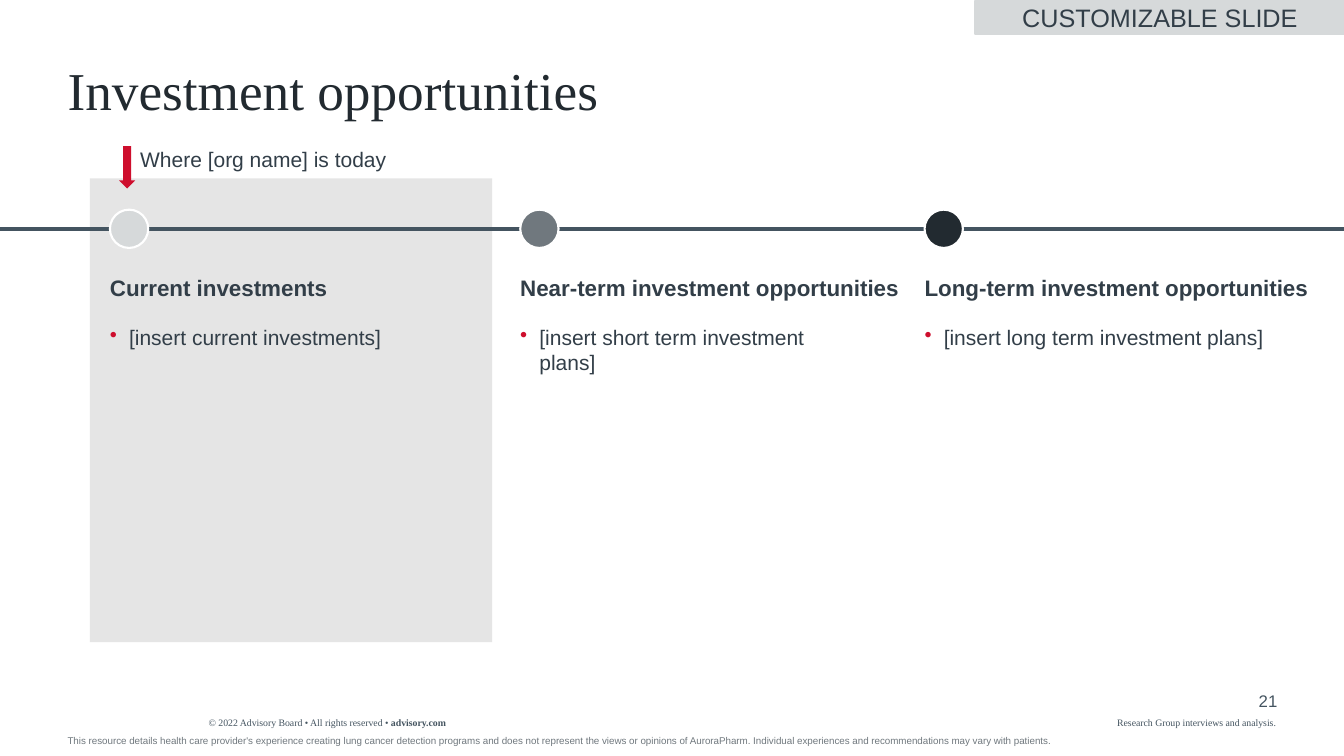
from dataclasses import dataclass

from lxml.etree import SubElement
from pptx import Presentation
from pptx.dml.color import RGBColor
from pptx.enum.shapes import MSO_CONNECTOR, MSO_SHAPE
from pptx.enum.text import MSO_ANCHOR, MSO_AUTO_SIZE, PP_ALIGN
from pptx.oxml.ns import qn
from pptx.util import Inches, Pt

SANS, SERIF = "Arial", "Times New Roman"
INK, SLATE, GREY, DARK = "323E48", "445460", "70787E", "222A30"
SILVER, PANEL, RED, WHITE = "D6D9DA", "E5E5E5", "CE0E2D", "FFFFFF"
SLIDE_WIDTH = 13.33
TIMELINE_Y = 2.27
MARKER_SIZE = 0.38


@dataclass
class Stage:
    left: float
    marker: str
    heading: str
    heading_width: float
    item: str
    item_width: float
    item_height: float = 0.25


@dataclass
class Label:
    text: str
    left: float
    top: float
    width: float
    height: float
    size: float
    color: str
    font: str = SANS
    bold: bool = False
    align: PP_ALIGN = PP_ALIGN.LEFT
    anchor: MSO_ANCHOR = MSO_ANCHOR.TOP
    bullet: bool = False


STAGES = [
    Stage(1.09, SILVER, "Current investments", 2.41,
          "[insert current investments]", 3.4),
    Stage(5.16, GREY, "Near-term investment opportunities", 3.86,
          "[insert short term investment plans]", 3.16, 0.5),
    Stage(9.17, DARK, "Long-term investment opportunities", 3.99,
          "[insert long term investment plans]", 3.42),
]
TITLE = Label("Investment opportunities", 0.67, 0.64, 12, 0.59, 38, DARK, SERIF)
TODAY = Label("Where [org name] is today", 1.39, 1.45, 2.5, 0.25, 15, INK)
COPYRIGHT = Label("© 2022 Advisory Board • All rights reserved • ",
                  2.07, 7.11, 3.26, 0.12, 7, SLATE, SERIF)
FOOTERS = [
    Label("Research Group interviews and analysis.",
          11.08, 7.11, 1.59, 0.12, 7, SLATE, SERIF),
    Label("21", 12.17, 6.85, 0.5, 0.2, 12, SLATE, align=PP_ALIGN.RIGHT),
    Label("This resource details health care provider's experience creating lung cancer "
          "detection programs and does not represent the views or opinions of AuroraPharm. "
          "Individual experiences and recommendations may vary with patients.",
          0.67, 7.17, 11.55, 0.24, 7, GREY, anchor=MSO_ANCHOR.BOTTOM),
]


def rgb(color: str) -> RGBColor:
    return RGBColor.from_string(color)


def style_run(run, label: Label, bold: bool) -> None:
    run.font.name = label.font
    run.font.size = Pt(label.size)
    run.font.bold = bold
    run.font.color.rgb = rgb(label.color)


def add_bullet(paragraph) -> None:
    properties = paragraph._p.get_or_add_pPr()
    properties.set("marL", str(Inches(0.19)))
    properties.set("indent", str(-Inches(0.19)))
    bullet_color = SubElement(properties, qn("a:buClr"))
    SubElement(bullet_color, qn("a:srgbClr"), val=RED)
    SubElement(properties, qn("a:buChar"), char="•")


def write_label(holder, label: Label):
    """Place a text holder, fill it with the label and return its paragraph."""
    holder.left, holder.top = Inches(label.left), Inches(label.top)
    holder.width, holder.height = Inches(label.width), Inches(label.height)
    frame = holder.text_frame
    frame.text = label.text
    frame.word_wrap = True
    frame.auto_size = MSO_AUTO_SIZE.NONE
    frame.vertical_anchor = label.anchor
    frame.margin_left = frame.margin_right = 0
    frame.margin_top = frame.margin_bottom = 0
    paragraph = frame.paragraphs[0]
    paragraph.alignment = label.align
    if label.bullet:
        add_bullet(paragraph)
    style_run(paragraph.runs[0], label, label.bold)
    return paragraph


def add_label(slide, label: Label):
    return write_label(slide.shapes.add_textbox(0, 0, 0, 0), label)


def add_block(slide, kind: MSO_SHAPE, left: float, top: float, width: float,
              height: float, fill: str, outline: str | None = None):
    block = slide.shapes.add_shape(kind, Inches(left), Inches(top),
                                   Inches(width), Inches(height))
    block.shadow.inherit = False
    block.fill.solid()
    block.fill.fore_color.rgb = rgb(fill)
    if outline:
        block.line.color.rgb = rgb(outline)
        block.line.width = Pt(1.5)
    else:
        block.line.fill.background()
    return block


def add_timeline(slide) -> None:
    timeline = slide.shapes.add_connector(
        MSO_CONNECTOR.STRAIGHT, 0, Inches(TIMELINE_Y),
        Inches(SLIDE_WIDTH), Inches(TIMELINE_Y))
    timeline.line.color.rgb = rgb(SLATE)
    timeline.line.width = Pt(3)
    SubElement(timeline._element.spPr, qn("a:effectLst"))


def add_stage(slide, stage: Stage) -> None:
    add_block(slide, MSO_SHAPE.OVAL, stage.left, TIMELINE_Y - MARKER_SIZE / 2,
              MARKER_SIZE, MARKER_SIZE, stage.marker, WHITE)
    add_label(slide, Label(stage.heading, stage.left, 2.72, stage.heading_width,
                           0.27, 16, INK, bold=True))
    add_label(slide, Label(stage.item, stage.left, 3.22, stage.item_width,
                           stage.item_height, 15, INK, bullet=True))


def main() -> None:
    deck = Presentation()
    deck.slide_width, deck.slide_height = Inches(SLIDE_WIDTH), Inches(7.5)
    slide = deck.slides.add_slide(deck.slide_layouts[5])

    title = write_label(slide.shapes.title, TITLE)
    title.line_spacing = 0.9

    add_block(slide, MSO_SHAPE.RECTANGLE, 0.89, 1.77, 3.99, 4.6, PANEL)
    today_arrow = add_block(slide, MSO_SHAPE.RIGHT_ARROW, 1.05, 1.58, 0.42, 0.16, RED)
    today_arrow.rotation = 90
    add_label(slide, TODAY)

    add_timeline(slide)
    for stage in STAGES:
        add_stage(slide, stage)

    tag = add_block(slide, MSO_SHAPE.RECTANGLE, 9.67, 0.01, 3.67, 0.33, SILVER, SILVER)
    write_label(tag, Label("CUSTOMIZABLE SLIDE", 9.67, 0.01, 3.67, 0.33, 18, INK,
                           align=PP_ALIGN.CENTER, anchor=MSO_ANCHOR.MIDDLE))

    site = add_label(slide, COPYRIGHT).add_run()
    site.text = "advisory.com"
    style_run(site, COPYRIGHT, bold=True)
    for footer in FOOTERS:
        add_label(slide, footer)

    deck.save("out.pptx")


if __name__ == "__main__":
    main()
